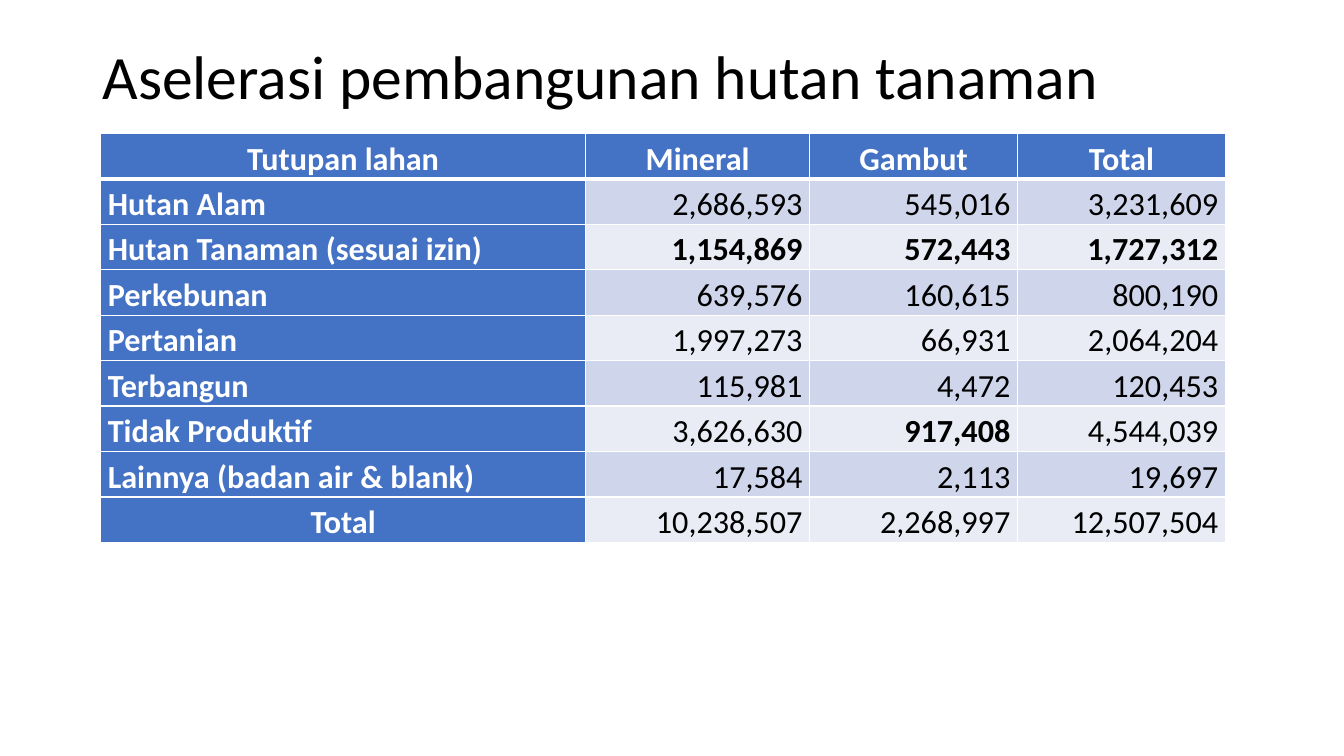
import dataclasses

import lxml.etree
import pptx
import pptx.dml.color
import pptx.enum.text
import pptx.oxml.ns
import pptx.util

Pt = pptx.util.Pt
Align = pptx.enum.text.PP_ALIGN
Anchor = pptx.enum.text.MSO_ANCHOR


@dataclasses.dataclass(frozen=True)
class Theme:
    font: str = "Calibri"
    title: int = 44
    body: int = 23
    dark: str = "000000"
    light: str = "FFFFFF"
    head: str = "4472C4"
    bands: tuple = ("CFD5EA", "E9EBF5")


THEME = Theme()
WIDTHS = (346.4, 160, 148.5, 148.5)
HEIGHT = 32.4
HEADER = ("Tutupan lahan", "Mineral", "Gambut", "Total")
COVER = (
    ("Hutan Alam", "2,686,593", "545,016", "3,231,609"),
    ("Hutan Tanaman (sesuai izin)", "1,154,869", "572,443", "1,727,312"),
    ("Perkebunan", "639,576", "160,615", "800,190"),
    ("Pertanian", "1,997,273", "66,931", "2,064,204"),
    ("Terbangun", "115,981", "4,472", "120,453"),
    ("Tidak Produktif", "3,626,630", "917,408", "4,544,039"),
    ("Lainnya (badan air & blank)", "17,584", "2,113", "19,697"),
    ("Total", "10,238,507", "2,268,997", "12,507,504"),
)
# Figures that stand out: row and column in the table
STRONG = {(2, 1), (2, 2), (2, 3), (6, 2)}


def color(value):
    return pptx.dml.color.RGBColor.from_string(value)


def write(frame, text, size, ink, align, spacing, bold=False):
    para = frame.paragraphs[0]
    para.alignment = align
    para.line_spacing = spacing
    run = para.add_run()
    run.text = text
    run.font.name = THEME.font
    run.font.size = Pt(size)
    run.font.bold = bold
    run.font.color.rgb = color(ink)


def border(cell, side, width):
    qn = pptx.oxml.ns.qn
    props = cell._tc.get_or_add_tcPr()
    line = lxml.etree.SubElement(props, qn(f"a:ln{side}"), w=str(Pt(width)))
    fill = lxml.etree.SubElement(line, qn("a:solidFill"))
    lxml.etree.SubElement(fill, qn("a:srgbClr"), val=THEME.light)


def add_title(slide, text):
    title = slide.shapes.title
    title.left, title.top = Pt(66), Pt(28.8)
    title.width, title.height = Pt(828), Pt(56.2)
    frame = title.text_frame
    frame.word_wrap = True
    frame.auto_size = pptx.enum.text.MSO_AUTO_SIZE.NONE
    frame.vertical_anchor = Anchor.MIDDLE
    write(frame, text, THEME.title, THEME.dark, Align.LEFT, 0.9)


def fill_cell(cell, text, row, col, last):
    # Margins and borders, with a heavy rule under the header
    cell.margin_left = cell.margin_right = Pt(5)
    cell.margin_top = cell.margin_bottom = Pt(0)
    cell.vertical_anchor = Anchor.TOP
    for side in "LRTB":
        heavy = (row, side) in ((0, "B"), (1, "T"))
        border(cell, side, 3 if heavy else 1)

    # Header row and label column share one look
    label = row == 0 or col == 0
    cell.fill.solid()
    shade = THEME.head if label else THEME.bands[(row - 1) % 2]
    cell.fill.fore_color.rgb = color(shade)

    if row == 0 or (col == 0 and row == last):
        align = Align.CENTER
    else:
        align = Align.LEFT if label else Align.RIGHT
    ink = THEME.light if label else THEME.dark
    bold = label or (row, col) in STRONG
    write(cell.text_frame, text, THEME.body, ink, align, 1.15, bold)


def add_grid(slide, rows):
    count = len(rows)
    frame = slide.shapes.add_table(
        count, len(WIDTHS), Pt(72), Pt(95.3), Pt(sum(WIDTHS)), Pt(HEIGHT * count)
    )
    table = frame.table
    for column, width in zip(table.columns, WIDTHS):
        column.width = Pt(width)
    table.first_col = True
    for r, values in enumerate(rows):
        table.rows[r].height = Pt(HEIGHT)
        for c, text in enumerate(values):
            fill_cell(table.cell(r, c), text, r, c, count - 1)


def main():
    deck = pptx.Presentation()
    deck.slide_width, deck.slide_height = Pt(960), Pt(540)
    slide = deck.slides.add_slide(deck.slide_layouts[5])
    add_title(slide, "Aselerasi pembangunan hutan tanaman")
    add_grid(slide, (HEADER, *COVER))
    deck.save("out.pptx")


if __name__ == "__main__":
    main()
